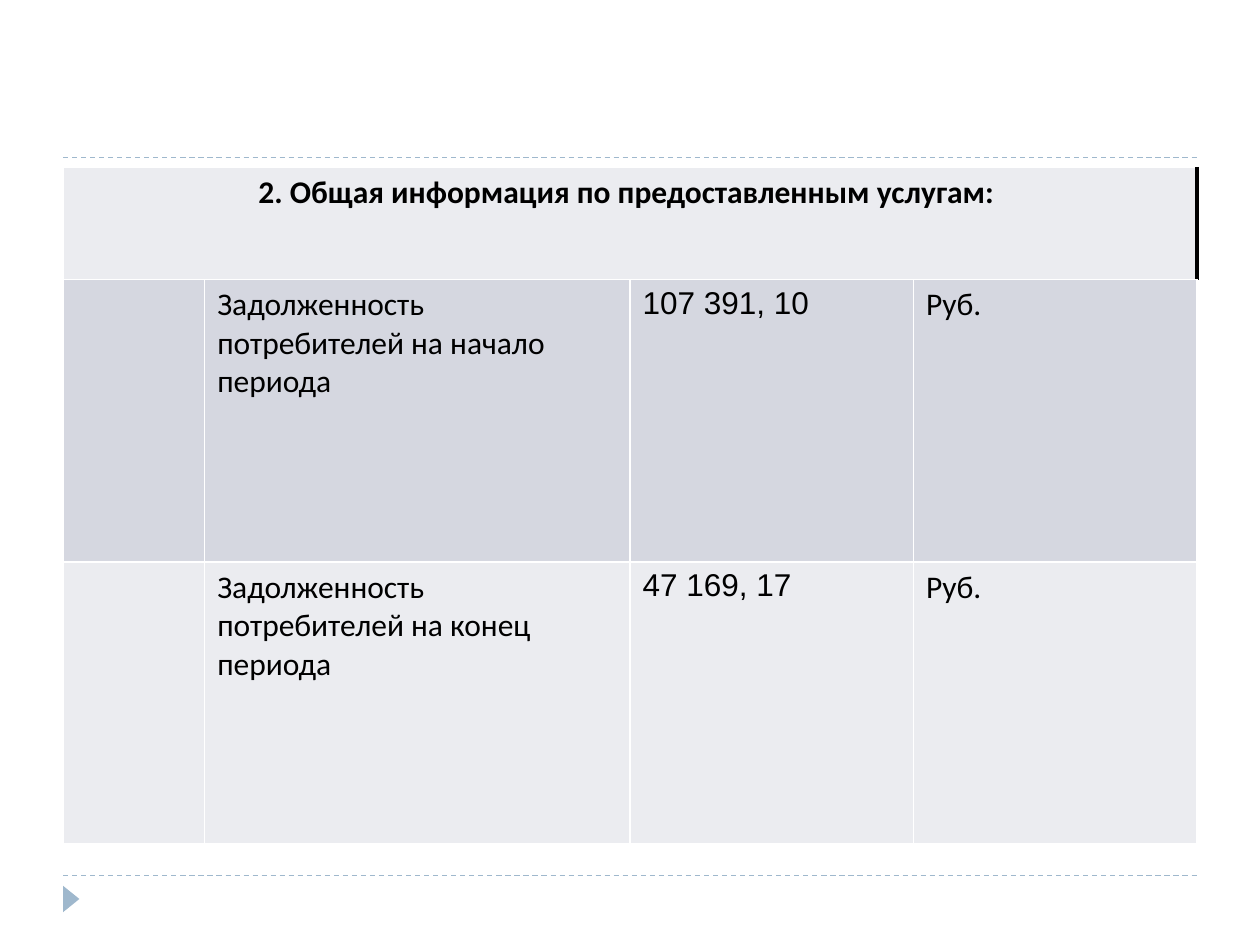
import pptx
import pptx.dml.color
import pptx.enum.dml
import pptx.enum.shapes
import pptx.enum.text
import pptx.oxml.ns
import pptx.util
from lxml import etree

WIDTH, HEIGHT = 10, 7.5
MARGIN = 0.05 * WIDTH
CONTENT = WIDTH - 2 * MARGIN
COLUMN_SHARES = [1 / 8, 3 / 8, 2 / 8, 2 / 8]
ROW_HEIGHTS = [0.89, 2.24, 2.24]
COLORS = {
    "accent": "9FB8CD",
    "light": "EBECF0",
    "band": "D5D7E0",
    "border": "FFFFFF",
    "text": "000000",
}
TITLE = "2. Общая информация по предоставленным услугам: "
DEBTS = [
    ("Задолженность потребителей на начало периода", "107 391, 10", "Руб."),
    ("Задолженность потребителей на конец периода", "47 169, 17", "Руб."),
]
FONTS = ["Calibri", "Arial", "Calibri"]


def inches(value):
    return pptx.util.Inches(value)


def rgb(name):
    return pptx.dml.color.RGBColor.from_string(COLORS[name])


def add_rule(s, y):
    line = s.shapes.add_connector(
        pptx.enum.shapes.MSO_CONNECTOR.STRAIGHT,
        inches(MARGIN), inches(y), inches(MARGIN + CONTENT), inches(y))
    line.line.color.rgb = rgb("accent")
    line.line.width = pptx.util.Pt(0.75)
    line.line.dash_style = pptx.enum.dml.MSO_LINE.DASH
    etree.SubElement(line._element.spPr, pptx.oxml.ns.qn("a:effectLst"))


def add_marker(s):
    sp = s.shapes.add_shape(
        pptx.enum.shapes.MSO_SHAPE.ISOSCELES_TRIANGLE,
        inches(0.46), inches(7.07), inches(0.21), inches(0.13))
    sp.rotation = 90
    sp.shadow.inherit = False
    sp.fill.solid()
    sp.fill.fore_color.rgb = rgb("accent")
    sp.line.fill.background()


def add_border(cell, side, color, width):
    qn = pptx.oxml.ns.qn
    ln = etree.SubElement(cell._tc.get_or_add_tcPr(), qn("a:ln" + side),
                          w=str(pptx.util.Pt(width)))
    fill = etree.SubElement(ln, qn("a:solidFill"))
    etree.SubElement(fill, qn("a:srgbClr"), val=COLORS[color])


def style_cell(cell, fill, heading=False):
    for side in "LRTB":
        if heading and side == "R":
            add_border(cell, side, "text", 2.25)
        else:
            add_border(cell, side, "border", 1)
    cell.fill.solid()
    cell.fill.fore_color.rgb = rgb(fill)


def write_cell(cell, text, font="Calibri", bold=False):
    p = cell.text_frame.paragraphs[0]
    r = p.add_run()
    r.text = text
    r.font.name = font
    r.font.size = pptx.util.Pt(18)
    r.font.bold = bold
    r.font.color.rgb = rgb("text")
    return p


def add_debt_table(s):
    table = s.shapes.add_table(
        len(ROW_HEIGHTS), len(COLUMN_SHARES), inches(MARGIN), inches(1.33),
        inches(CONTENT), inches(sum(ROW_HEIGHTS))).table
    table.first_row = False
    table.horz_banding = False
    for column, share in zip(table.columns, COLUMN_SHARES):
        column.width = inches(CONTENT * share)
    for i, (row, height) in enumerate(zip(table.rows, ROW_HEIGHTS)):
        row.height = inches(height)
        for cell in row.cells:
            style_cell(cell, "band" if i % 2 else "light", heading=i == 0)

    heading = table.cell(0, 0)
    heading.merge(table.cell(0, len(COLUMN_SHARES) - 1))
    p = write_cell(heading, TITLE, bold=True)
    p.alignment = pptx.enum.text.PP_ALIGN.CENTER
    for i, debt in enumerate(DEBTS, start=1):
        for j, (text, font) in enumerate(zip(debt, FONTS), start=1):
            write_cell(table.cell(i, j), text, font)


def main():
    prs = pptx.Presentation()
    prs.slide_width = inches(WIDTH)
    prs.slide_height = inches(HEIGHT)
    s = prs.slides.add_slide(prs.slide_layouts[6])
    for y in (6.95, 1.25):
        add_rule(s, y)
    add_marker(s)
    add_debt_table(s)
    prs.save("out.pptx")


if __name__ == "__main__":
    main()
